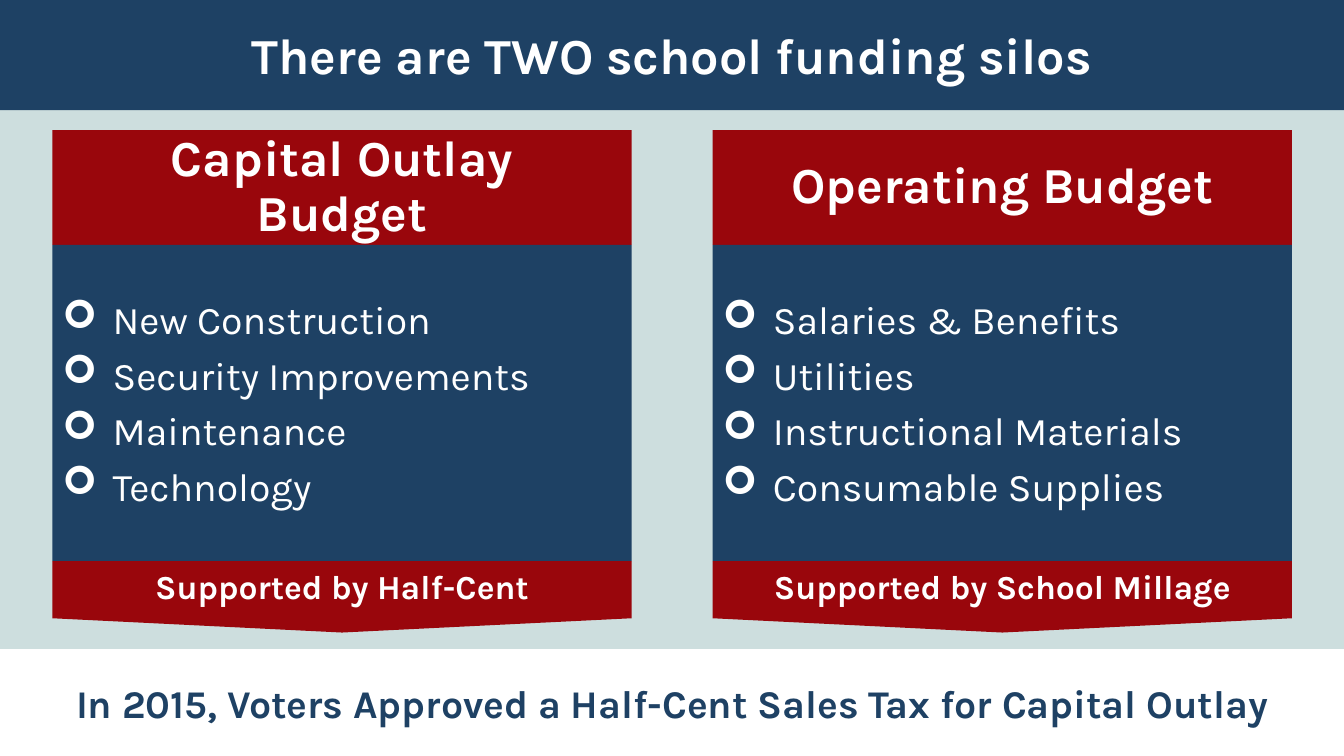
from lxml import etree
from pptx import Presentation
from pptx import util as u
from pptx.dml.color import RGBColor
from pptx.enum import shapes, text
from pptx.oxml.ns import qn

WIDTH, HEIGHT = 33.87, 19.05
NAVY, RED, WHITE, PALE = "1E4164", "99060C", "FFFFFF", "CDDEDE"
COLUMN_WIDTH = 14.6
HEADER_TOP, BODY_TOP, FOOTER_TOP = 3.28, 6.17, 14.14

SILOS = [
    (1.32, "Capital Outlay Budget", "Supported by Half-Cent",
     ["New Construction", "Security Improvements", "Maintenance", "Technology"]),
    (17.96, "Operating Budget", "Supported by School Millage",
     ["Salaries & Benefits", "Utilities", "Instructional Materials", "Consumable Supplies"]),
]


def color(value):
    return RGBColor.from_string(value)


class SlideBuilder:
    font_name = "Karla"

    def __init__(self, slide):
        self.slide = slide

    def background(self, fill):
        self.slide.background.fill.solid()
        self.slide.background.fill.fore_color.rgb = color(fill)

    def block(self, left, top, width, height, fill, kind=shapes.MSO_SHAPE.RECTANGLE):
        shape = self.slide.shapes.add_shape(
            kind, u.Cm(left), u.Cm(top), u.Cm(width), u.Cm(height))
        shape.shadow.inherit = False
        shape.fill.solid()
        shape.fill.fore_color.rgb = color(fill)
        shape.line.fill.background()
        return shape

    def style(self, paragraph, size, ink, bold):
        font = paragraph.font
        font.name, font.size, font.bold = self.font_name, u.Pt(size), bold
        font.color.rgb = color(ink)

    def heading(self, shape, words):
        """Write a centred title inside a filled block."""
        frame = shape.text_frame
        frame.word_wrap = True
        frame.vertical_anchor = text.MSO_ANCHOR.MIDDLE
        frame.margin_left = frame.margin_right = u.Cm(0.72)
        frame.margin_top = frame.margin_bottom = u.Cm(0.41)
        paragraph = frame.paragraphs[0]
        paragraph.text = words
        paragraph.alignment = text.PP_ALIGN.CENTER
        paragraph.line_spacing = 0.9
        self.style(paragraph, 36, WHITE, True)

    def text_box(self, left, top, width, height):
        box = self.slide.shapes.add_textbox(
            u.Cm(left), u.Cm(top), u.Cm(width), u.Cm(height))
        frame = box.text_frame
        frame.word_wrap = True
        frame.auto_size = text.MSO_AUTO_SIZE.SHAPE_TO_FIT_TEXT
        return frame

    def caption(self, left, top, width, height, words, size, ink=WHITE):
        paragraph = self.text_box(left, top, width, height).paragraphs[0]
        paragraph.text = words
        paragraph.alignment = text.PP_ALIGN.CENTER
        self.style(paragraph, size, ink, True)

    def bullets(self, left, top, width, height, items):
        frame = self.text_box(left, top, width, height)
        for index, item in enumerate(items):
            paragraph = frame.add_paragraph() if index else frame.paragraphs[0]
            paragraph.text = item
            paragraph.level = 1
            paragraph.space_after = u.Pt(6)
            properties = paragraph._p.get_or_add_pPr()
            properties.set("marL", str(u.Cm(1.27)))
            properties.set("indent", str(-u.Cm(1.27)))
            etree.SubElement(properties, qn("a:buFont"), typeface="Wingdings")
            etree.SubElement(properties, qn("a:buChar"), char="➢")
            self.style(paragraph, 28, WHITE, False)

    def silo(self, left, title, support, items):
        header = self.block(left, HEADER_TOP, COLUMN_WIDTH, BODY_TOP - HEADER_TOP, RED)
        self.heading(header, title)
        self.block(left, BODY_TOP, COLUMN_WIDTH, FOOTER_TOP - BODY_TOP, NAVY)
        self.bullets(left, 7.32, COLUMN_WIDTH, 5.69, items)
        self.block(left, FOOTER_TOP, COLUMN_WIDTH, 1.8, RED,
                   shapes.MSO_SHAPE.FLOWCHART_OFFPAGE_CONNECTOR)
        self.caption(left, FOOTER_TOP, COLUMN_WIDTH, 1.26, support, 24)


def main():
    presentation = Presentation()
    presentation.slide_width, presentation.slide_height = u.Cm(WIDTH), u.Cm(HEIGHT)
    builder = SlideBuilder(presentation.slides.add_slide(presentation.slide_layouts[6]))
    builder.background(PALE)
    builder.block(0, 16.36, WIDTH, HEIGHT - 16.36, WHITE)
    builder.block(0, 0, WIDTH, 2.78, NAVY)
    builder.caption(0, 0.48, WIDTH, 1.8, "There are TWO school funding silos", 36)
    for silo in SILOS:
        builder.silo(*silo)
    builder.caption(0, 17, WIDTH, 1.45,
                    "In 2015, Voters Approved a Half-Cent Sales Tax for Capital Outlay", 28, NAVY)
    presentation.save("out.pptx")


if __name__ == "__main__":
    main()
